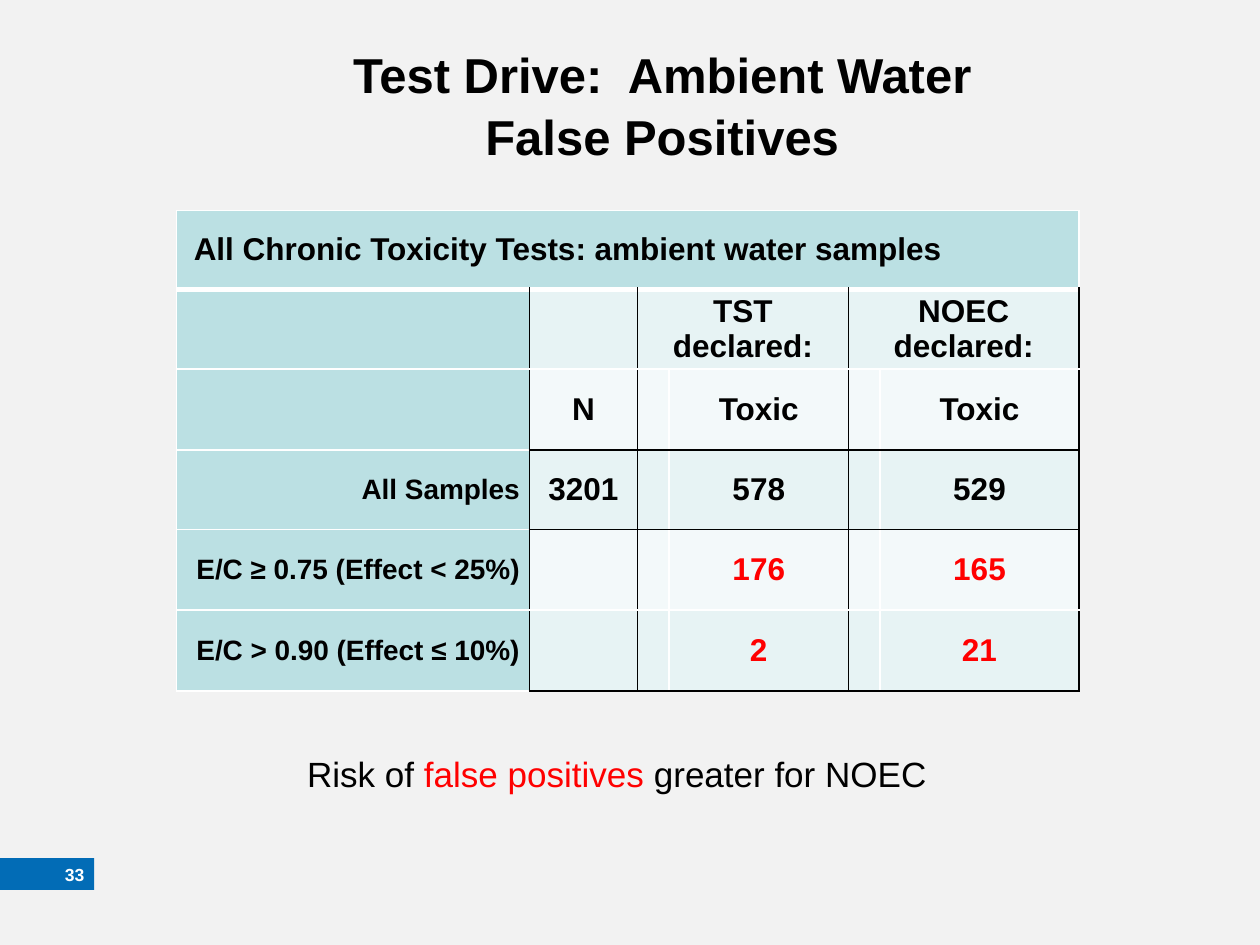
from lxml.etree import SubElement as Sub
from pptx import Presentation
from pptx.dml.color import RGBColor as Rgb
from pptx.enum.shapes import MSO_SHAPE as Shape
from pptx.enum.text import MSO_ANCHOR as Anchor, PP_ALIGN as Align
from pptx.oxml.ns import qn
from pptx.util import Cm, Pt

HUES = {
    "page": "F2F2F2", "bar": "026CB6", "head": "BBE0E3", "odd": "E7F3F4",
    "even": "F3F9FA", "black": "000000", "white": "FFFFFF", "red": "FF0000",
}
COLS = [7.11, 2.18, 0.64, 3.61, 0.64, 4.01]
ROWS = [1.6, 1.6, 1.63, 1.6, 1.63, 1.63]
BASES = ["white", "white", "black", "black", "white", "black"]
TITLE = "All Chronic Toxicity Tests: ambient water samples"
DATA = [
    ["", "", "TST declared:", "", "NOEC declared:", ""],
    ["", "N", "", "Toxic", "", "Toxic"],
    ["All Samples", "3201", "", "578", "", "529"],
    ["E/C ≥ 0.75 (Effect < 25%)", "", "", "176", "", "165"],
    ["E/C > 0.90 (Effect ≤ 10%)", "", "", "2", "", "21"],
]


def paint(fill, hue):
    """Give a fill one solid colour."""
    fill.solid()
    fill.fore_color.rgb = Rgb.from_string(HUES[hue])


def write(frame, *runs, size=18, bold=True, hue="black", align=Align.LEFT, space=None):
    """Write runs, each a string or a (string, format) pair, in one paragraph."""
    para = frame.paragraphs[0]
    para.alignment = align
    para.line_spacing = space
    for item in runs:
        text, form = item if isinstance(item, tuple) else (item, {})
        if text == "\n":
            para.add_line_break()
            continue
        run = para.add_run()
        run.text = text
        run.font.name = "Arial"
        run.font.size = Pt(form.get("size", size))
        run.font.bold = bold
        run.font.color.rgb = Rgb.from_string(HUES[form.get("hue", hue)])


def add_text(slide, box, *runs, **form):
    """Add a wrapped text box."""
    frame = slide.shapes.add_textbox(*map(Cm, box)).text_frame
    frame.word_wrap = True
    write(frame, *runs, **form)


def add_bar(slide, box, text):
    """Add the page number bar."""
    bar = slide.shapes.add_shape(Shape.RECTANGLE, *map(Cm, box))
    bar.shadow.inherit = False
    bar.line.fill.background()
    paint(bar.fill, "bar")
    frame = bar.text_frame
    frame.vertical_anchor = Anchor.MIDDLE
    frame.margin_left = frame.margin_top = frame.margin_bottom = 0
    frame.margin_right = Cm(0.2)
    write(frame, text, size=10, hue="white", align=Align.RIGHT)


def edge(cell, **sides):
    """Draw cell borders given as side=(hue, points)."""
    props = cell._tc.get_or_add_tcPr()
    for spot, (side, (hue, width)) in enumerate(sides.items()):
        line = props.makeelement(qn(f"a:ln{side}"), {"w": str(Pt(width))})
        Sub(Sub(line, qn("a:solidFill")), qn("a:srgbClr"), val=HUES[hue])
        props.insert(spot, line)


def borders(row, col):
    """Work out the border colours of one cell."""
    if row == 0:
        return {side: ("white", 3 if side == "B" else 1) for side in "LRTB"}
    seam = row > 1
    left = "white" if col == 0 or seam and col in (3, 5) else "black"
    right = "white" if seam and col in (2, 4) else "black"
    top, base = (BASES[row - 1], BASES[row]) if col else ("white", "white")
    return {"L": (left, 1), "R": (right, 1), "T": (top, 3 if row == 1 else 1), "B": (base, 1)}


def style(cell, row, col):
    """Set the fill, margins and borders of one cell."""
    hue = "head" if row == 0 or col == 0 else "odd" if row % 2 else "even"
    paint(cell.fill, hue)
    cell.vertical_anchor = Anchor.MIDDLE
    cell.margin_left = cell.margin_right = Cm(0.19)
    cell.margin_top = cell.margin_bottom = 0
    edge(cell, **borders(row, col))


def add_grid(slide, left, top):
    """Add the table of test results."""
    size = Cm(sum(COLS)), Cm(sum(ROWS))
    grid = slide.shapes.add_table(len(ROWS), len(COLS), Cm(left), Cm(top), *size).table
    for col, width in zip(grid.columns, COLS):
        col.width = Cm(width)
    for row, height in zip(grid.rows, ROWS):
        row.height = Cm(height)
    for row in range(len(ROWS)):
        for col in range(len(COLS)):
            style(grid.cell(row, col), row, col)
    for row, start, end in [(0, 0, 5), (1, 2, 3), (1, 4, 5)]:
        grid.cell(row, start).merge(grid.cell(row, end))
    write(grid.cell(0, 0).text_frame, (" ", {"size": 16}), TITLE)
    for row, line in enumerate(DATA, 1):
        for col, text in enumerate(line):
            if text:
                form = {"size": 18, "align": Align.CENTER} if col else {"size": 16, "align": Align.RIGHT}
                hue = "red" if col and row > 3 else "black"
                write(grid.cell(row, col).text_frame, text, hue=hue, **form)


def main():
    """Build the slide and save it."""
    deck = Presentation()
    deck.slide_width, deck.slide_height = Cm(25.4), Cm(19.05)
    slide = deck.slides.add_slide(deck.slide_layouts[6])
    paint(slide.background.fill, "page")
    add_bar(slide, (0, 17.3, 1.9, 0.64), "33")
    add_text(slide, (4.88, 0.71, 16.94, 2.49), "Test Drive:  Ambient Water", "\n",
             "False Positives", size=28, align=Align.CENTER, space=1.05)
    add_grid(slide, 3.56, 4.24)
    add_text(slide, (5.94, 15.04, 15.44, 1.12), "Risk of ", ("false positives", {"hue": "red"}),
             " greater for NOEC", size=20, bold=False)
    deck.save("out.pptx")


if __name__ == "__main__":
    main()
